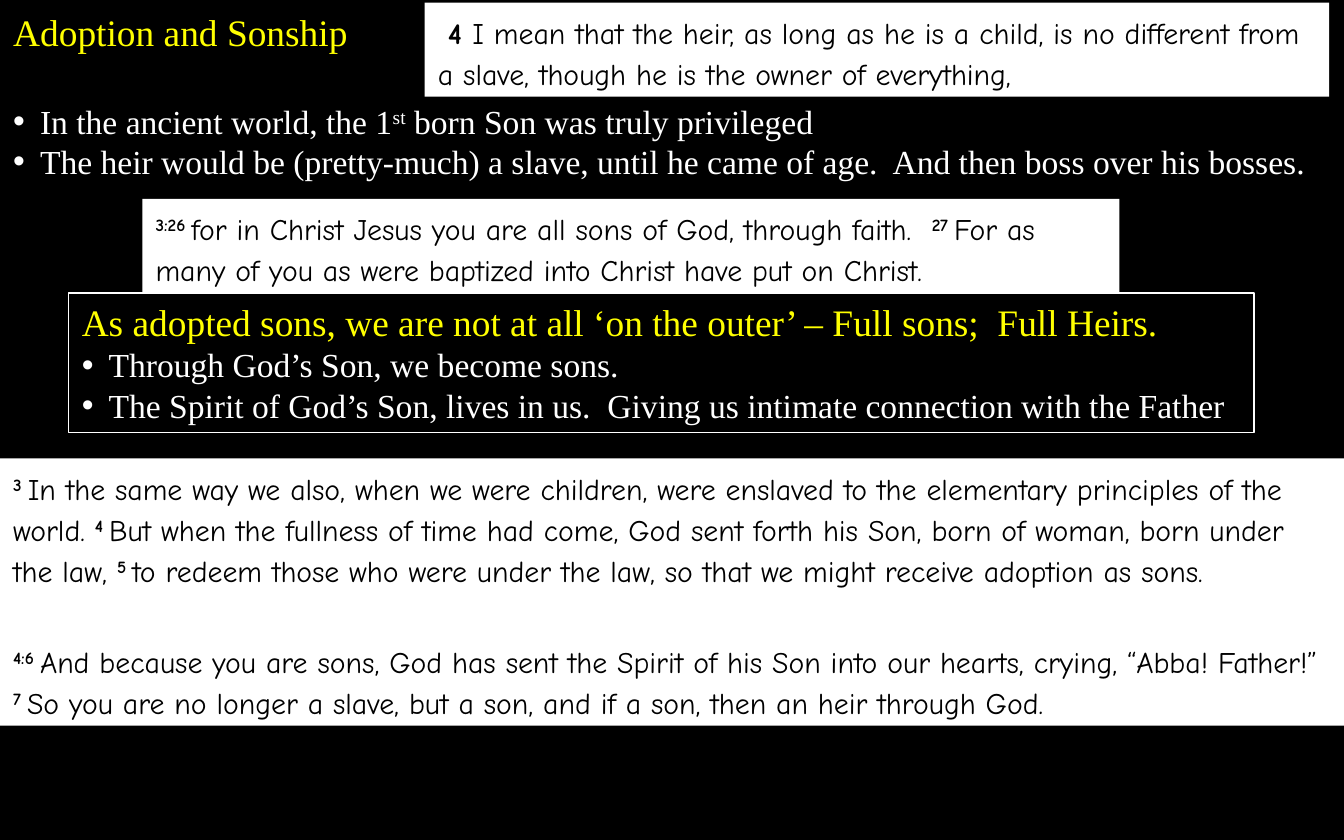
from pptx import Presentation
from pptx.dml.color import RGBColor
from pptx.enum import shapes, text
from pptx.oxml import parse_xml
from pptx.oxml.ns import nsdecls
from pptx.util import Inches, Pt

BLACK, WHITE, YELLOW = "000000", "FFFFFF", "FFFF00"
SERIF, SCRIPTURE = "Times New Roman", "Comic Neue"
HEADING_SIZE, POINT_SIZE, VERSE_SIZE = 20, 18, 16


def color(hex_code):
    return RGBColor.from_string(hex_code)


def raised(run):
    """Set the run as superscript."""
    run._r.get_or_add_rPr().set("baseline", "30000")


class SermonSlide:
    def __init__(self, slide):
        self.slide = slide
        slide.background.fill.solid()
        slide.background.fill.fore_color.rgb = color(BLACK)

    def prepare(self, frame):
        frame.word_wrap = True
        frame.auto_size = text.MSO_AUTO_SIZE.NONE
        frame.vertical_anchor = text.MSO_ANCHOR.TOP
        return frame

    def text_area(self, left, top, width, height):
        area = self.slide.shapes.add_textbox(
            Inches(left), Inches(top), Inches(width), Inches(height))
        return self.prepare(area.text_frame)

    def panel(self, left, top, width, height, fill=None, line=None):
        box = self.slide.shapes.add_shape(
            shapes.MSO_SHAPE.RECTANGLE,
            Inches(left), Inches(top), Inches(width), Inches(height))
        box.shadow.inherit = False
        if fill:
            box.fill.solid()
            box.fill.fore_color.rgb = color(fill)
        else:
            box.fill.background()
        if line:
            box.line.color.rgb = color(line)
            box.line.width = Pt(0.75)
        else:
            box.line.fill.background()
        return self.prepare(box.text_frame)

    def paragraph(self, frame, size, font, hex_code):
        """Use the frame's first paragraph while it is empty, else add one."""
        first = frame.paragraphs[0]
        para = frame.add_paragraph() if first.runs else first
        para.alignment = text.PP_ALIGN.LEFT
        para.font.size = Pt(size)
        para.font.name = font
        para.font.color.rgb = color(hex_code)
        return para

    def heading(self, frame, words):
        para = self.paragraph(frame, HEADING_SIZE, SERIF, YELLOW)
        para.add_run().text = words

    def point(self, frame, before, ordinal="", after=""):
        """Add a bullet, with an optional raised ordinal ending inside it."""
        para = self.paragraph(frame, POINT_SIZE, SERIF, WHITE)
        properties = para._p.get_or_add_pPr()
        properties.set("marL", str(Inches(0.2)))
        properties.set("indent", str(-Inches(0.2)))
        bullet_font = parse_xml(f'<a:buFont {nsdecls("a")} typeface="Arial"/>')
        bullet = parse_xml(f'<a:buChar {nsdecls("a")} char="•"/>')
        defaults = properties.find(
            "{http://schemas.openxmlformats.org/drawingml/2006/main}defRPr")
        defaults.addprevious(bullet_font)
        defaults.addprevious(bullet)
        para.add_run().text = before
        if ordinal:
            suffix = para.add_run()
            suffix.text = ordinal
            raised(suffix)
            para.add_run().text = after

    def passage(self, bounds, verses, lead="", raise_numbers=True):
        """Add a white panel of (verse number, words) pairs."""
        frame = self.panel(*bounds, fill=WHITE)
        para = self.paragraph(frame, VERSE_SIZE, SCRIPTURE, BLACK)
        para.line_spacing = 1.15
        para.space_after = Pt(10)
        if lead:
            para.add_run().text = lead
        for verse, words in verses:
            number = para.add_run()
            number.text = verse + " "
            number.font.bold = True
            if raise_numbers:
                raised(number)
            para.add_run().text = words


def main():
    deck = Presentation()
    deck.slide_width, deck.slide_height = Inches(10), Inches(6.25)
    sermon = SermonSlide(deck.slides.add_slide(deck.slide_layouts[6]))

    sermon.heading(sermon.text_area(0, 0.02, 2.87, 0.44), "Adoption and Sonship")

    ancient_world = sermon.text_area(0, 0.7, 10, 0.71)
    sermon.point(ancient_world, "In the ancient world, the 1", "st",
                 " born Son was truly privileged")
    sermon.point(ancient_world, "The heir would be (pretty-much) a slave, until he "
                 "came of age.  And then boss over his bosses.")

    sermon.passage((3.16, 0.02, 6.73, 0.7), [
        ("4", "I mean that the heir, as long as he is a child, is no different "
              "from a slave, though he is the owner of everything,"),
    ], lead=" ", raise_numbers=False)

    adopted = sermon.panel(0.51, 2.18, 8.82, 1.04, line=WHITE)
    sermon.heading(adopted, "As adopted sons, we are not at all ‘on the outer’ – "
                   "Full sons;  Full Heirs.")
    sermon.point(adopted, "Through God’s Son, we become sons.")
    sermon.point(adopted, "The Spirit of God’s Son, lives in us.  Giving us intimate "
                 "connection with the Father")

    sermon.passage((1.06, 1.48, 7.27, 0.7), [
        ("3:26", "for in Christ Jesus you are all sons of God, through faith.  "),
        ("27", "For as many of you as were baptized into Christ have put on Christ."),
    ])
    sermon.passage((0, 4.7, 10, 0.7), [
        ("4:6", "And because you are sons, God has sent the Spirit of his Son into "
                "our hearts, crying, “Abba! Father!”  "),
        ("7", "So you are no longer a slave, but a son, and if a son, then an heir "
              "through God."),
    ])
    sermon.passage((0, 3.41, 10, 1.32), [
        ("3", "In the same way we also, when we were children, were enslaved to the "
              "elementary principles of the world. "),
        ("4", "But when the fullness of time had come, God sent forth his Son, born "
              "of woman, born under the law, "),
        ("5", "to redeem those who were under the law, so that we might receive "
              "adoption as sons."),
    ])
    deck.save("out.pptx")


if __name__ == "__main__":
    main()
